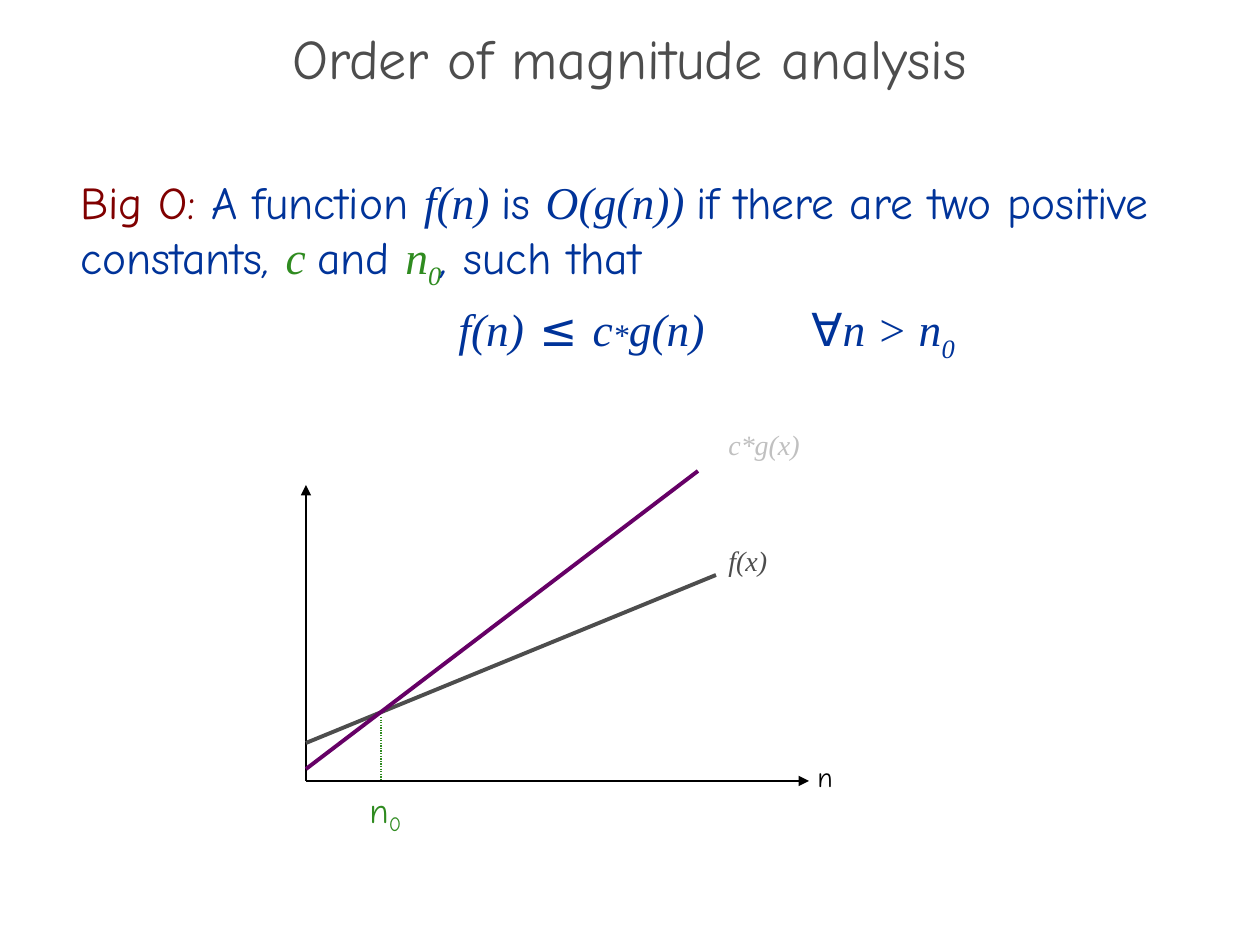
import pptx
import pptx.dml.color
import pptx.enum.dml
import pptx.enum.shapes
import pptx.enum.text
import pptx.oxml
import pptx.oxml.ns
import pptx.util

SCALE = 914400 / 126
SANS = "Comic Neue"
SERIF = "Times New Roman"
HUES = {
    "black": "000000",
    "gray": "4D4D4D",
    "pale": "C0C0C0",
    "maroon": "800000",
    "blue": "003399",
    "green": "2F8B20",
    "purple": "660066",
}


def emu(px):
    return pptx.util.Emu(round(px * SCALE))


def color(name):
    return pptx.dml.color.RGBColor.from_string(HUES[name])


def write(para, text, size=26, font=SANS, hue="blue", italic=False, sub=False):
    run = para.add_run()
    run.text = text
    run.font.size = pptx.util.Pt(size)
    run.font.name = font
    run.font.italic = italic
    run.font.color.rgb = color(hue)
    if sub:
        run.font._element.set("baseline", "-25000")


def frame(slide, box, wrap=True):
    area = slide.shapes.add_textbox(*map(emu, box)).text_frame
    area.word_wrap = wrap
    if not wrap:
        area.auto_size = pptx.enum.text.MSO_AUTO_SIZE.SHAPE_TO_FIT_TEXT
    return area


def line(slide, start, end, hue, width=0.75, arrow=False, dash=None):
    link = slide.shapes.add_connector(
        pptx.enum.shapes.MSO_CONNECTOR.STRAIGHT, *map(emu, (*start, *end)))
    link.line.color.rgb = color(hue)
    link.line.width = pptx.util.Pt(width)
    if dash:
        link.line.dash_style = dash
    props = link._element.spPr
    if arrow:
        tail = pptx.oxml.ns.qn("a:tailEnd")
        link.line._get_or_add_ln().append(props.makeelement(tail, {"type": "triangle"}))
    props.append(props.makeelement(pptx.oxml.ns.qn("a:effectLst"), {}))


def stops(para, places):
    props = para._p.get_or_add_pPr()
    tabs = props.makeelement(pptx.oxml.ns.qn("a:tabLst"), {})
    for place in places:
        tabs.append(props.makeelement(
            pptx.oxml.ns.qn("a:tab"), {"pos": str(emu(place)), "algn": "l"}))
    props.append(tabs)


def title(slide, box):
    area = frame(slide, box)
    area.vertical_anchor = pptx.enum.text.MSO_ANCHOR.MIDDLE
    para = area.paragraphs[0]
    para.alignment = pptx.enum.text.PP_ALIGN.CENTER
    para.line_spacing = 0.7
    write(para, "Order of magnitude analysis", size=32, hue="gray")


def body(slide, box):
    area = frame(slide, box)
    math = {"font": SERIF, "italic": True}
    term = {**math, "hue": "green"}
    claim = [
        ("Big O:", {"hue": "maroon"}),
        (" A function ", {}),
        ("f(n) ", math),
        ("is ", {}),
        ("O(g(n)) ", math),
        ("if there are two positive constants", {}),
        (", ", {"italic": True}),
        ("c ", term),
        ("and ", {}),
        ("n", term),
        ("0", {**term, "sub": True}),
        (", ", {"italic": True}),
        ("such that", {}),
    ]
    bound = [
        ("\tf(n)", math),
        (" ≤ ", {"italic": True}),
        ("c", math),
        ("*", {**math, "size": 18}),
        ("g(n)", math),
        ("\t∀", {}),
        ("n > n", math),
        ("0", {**math, "sub": True}),
    ]
    paras = [area.paragraphs[0], area.add_paragraph()]
    for para, runs in zip(paras, (claim, bound)):
        para.space_after = pptx.util.Pt(6)
        for text, style in runs:
            write(para, text, **style)
    stops(paras[1], (378, 731))


def plot(slide, box):
    left, top, wide, high = box

    def at(x, y):
        return left + x, top + y

    base = 360
    zero = at(0, base)
    line(slide, zero, at(0, 64), "black", arrow=True)
    line(slide, zero, at(503, base), "black", arrow=True)
    line(slide, at(0, 322), at(410, 154), "gray", width=2.25)
    line(slide, at(0, 348), at(392, 50), "purple", width=2.25)
    line(slide, at(75, 296), at(75, base), "green",
         dash=pptx.enum.dml.MSO_LINE.ROUND_DOT)

    curve = {"size": 16, "font": SERIF, "italic": True}
    point = {"size": 20, "hue": "green"}
    labels = [
        ((410, 0, 132, 63), [("c*g(x)", {**curve, "hue": "pale"})]),
        ((410, 116, 83, 63), [("f(x)", {**curve, "hue": "gray"})]),
        ((499, 332, 40, 47), [("n", {"size": 16, "hue": "black"})]),
        ((51, 361, 58, 55), [("n", point), ("0", {**point, "sub": True})]),
    ]
    for (x, y, w, h), runs in labels:
        para = frame(slide, (*at(x, y), w, h), wrap=False).paragraphs[0]
        for text, style in runs:
            write(para, text, **style)


def main():
    deck = pptx.Presentation()
    deck.slide_width = emu(1260)
    deck.slide_height = emu(945)
    slide = deck.slides.add_slide(deck.slide_layouts[6])
    title(slide, (0, 34, 1260, 63))
    body(slide, (68, 168, 1155, 714))
    plot(slide, (306, 421, 542, 416))
    deck.save("out.pptx")


if __name__ == "__main__":
    main()
